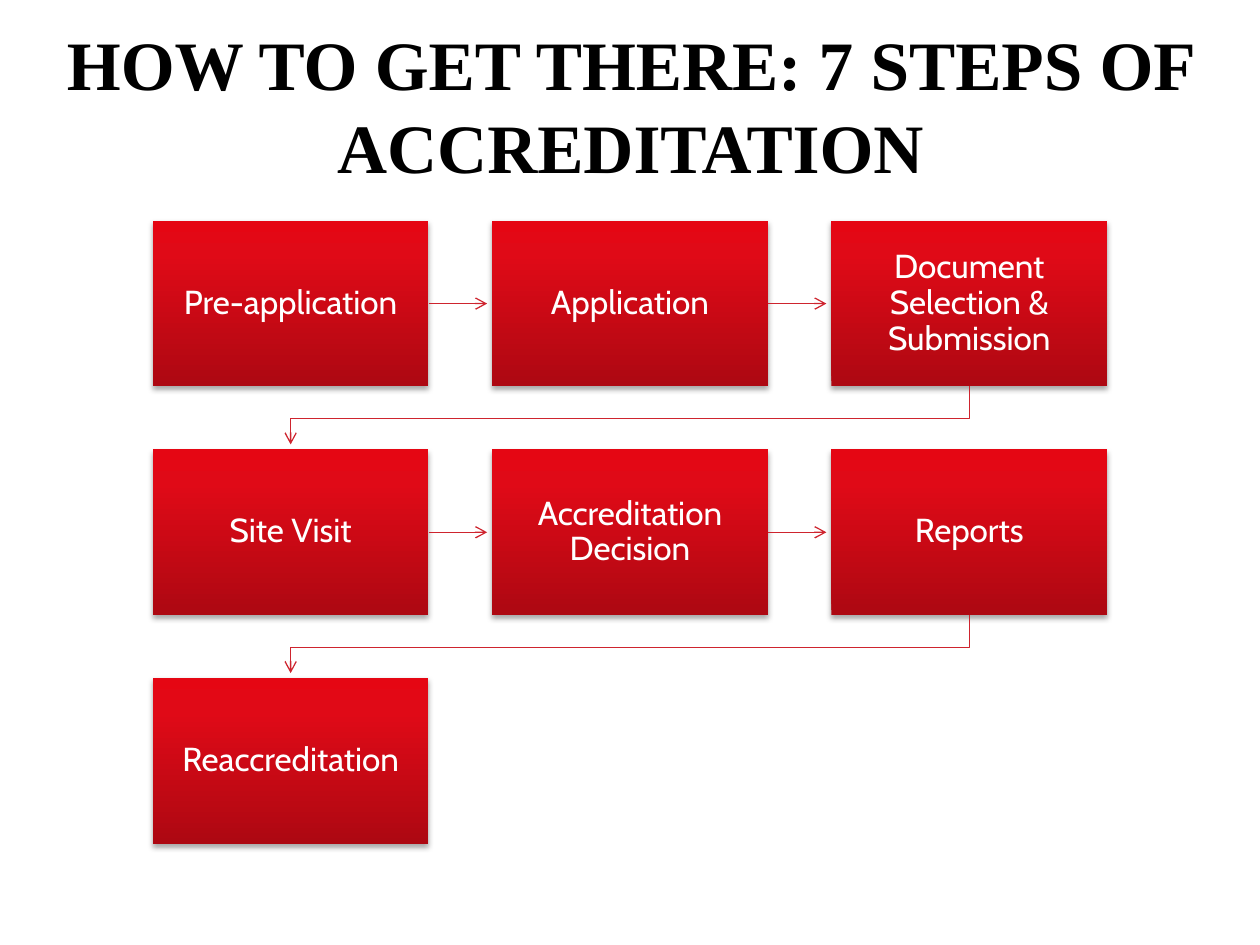
from dataclasses import dataclass

from lxml import etree
from pptx import Presentation
from pptx.dml.color import RGBColor
from pptx.enum.shapes import MSO_CONNECTOR, MSO_SHAPE
from pptx.enum.text import MSO_ANCHOR, PP_ALIGN
from pptx.oxml import parse_xml
from pptx.oxml.ns import qn
from pptx.util import Cm, Pt

RECT = MSO_SHAPE.RECTANGLE
STRAIGHT = MSO_CONNECTOR.STRAIGHT
MIDDLE = MSO_ANCHOR.MIDDLE
CENTER = PP_ALIGN.CENTER
BOTTOM, RIGHT = 2, 3
NS = "http://schemas.openxmlformats.org/drawingml/2006/main"


@dataclass(frozen=True)
class Theme:
    ink: str = "000000"
    paper: str = "FFFFFF"
    arrow: str = "CE242E"
    stops: tuple = ((0, "AD0812"), (80, "E00A17"), (100, "E50613"))
    head: str = "Times New Roman"
    body: str = "Cabin"
    head_size: float = 39.6
    body_size: float = 19
    line: float = 0.75


THEME = Theme()
STEPS = ["Pre-application", "Application", "Document Selection & Submission",
         "Site Visit", "Accreditation Decision", "Reports", "Reaccreditation"]
COLS = 3
STEP_W, STEP_H = 5.56, 3.34
PITCH_X, PITCH_Y = 6.84, 4.61
GAP = 0.1    # space between an arrow tip and the next step
DROP = 0.65  # fall of a row link before it turns left


def set_all(item, values):
    for name, value in values.items():
        setattr(item, name, value)


def write(shape, text, inset, spacing, font):
    frame = shape.text_frame
    sides = ("left", "top", "right", "bottom")
    set_all(frame, {"word_wrap": True, "vertical_anchor": MIDDLE,
                    **{f"margin_{side}": Cm(inset) for side in sides}})
    para = frame.paragraphs[0]
    set_all(para, {"text": text, "alignment": CENTER, "line_spacing": spacing})
    color = font.pop("color")
    set_all(para.runs[0].font, font)
    para.runs[0].font.color.rgb = RGBColor.from_string(color)


def add_title(slide, text, x, y, w, h):
    box = slide.shapes.add_textbox(Cm(x), Cm(y), Cm(w), Cm(h))
    write(box, text, 0.25, 1.0, {"name": THEME.head, "bold": True,
                                 "size": Pt(THEME.head_size), "color": THEME.ink})


def shade(shape):
    """Give a step its upward gradient and soft shadow."""
    stops = "".join(f'<a:gs pos="{pos * 1000}"><a:srgbClr val="{color}"/></a:gs>'
                    for pos, color in THEME.stops)
    shape.fill.gradient()
    props = shape._element.spPr
    props.replace(props.find(qn("a:gradFill")), parse_xml(
        f'<a:gradFill xmlns:a="{NS}" rotWithShape="1"><a:gsLst>{stops}</a:gsLst>'
        '<a:lin ang="16200000" scaled="0"/></a:gradFill>'))
    shape.line.fill.background()
    shape.shadow.inherit = False
    props.find(qn("a:effectLst")).append(parse_xml(
        f'<a:outerShdw xmlns:a="{NS}" blurRad="{Pt(3.1)}" dist="{Pt(1.8)}" '
        'dir="5400000" rotWithShape="0"><a:srgbClr val="000000">'
        '<a:alpha val="35000"/></a:srgbClr></a:outerShdw>'))


def add_step(slide, text, x, y):
    step = slide.shapes.add_shape(RECT, Cm(x), Cm(y), Cm(STEP_W), Cm(STEP_H))
    shade(step)
    write(step, text, 0.38, 0.9, {"name": THEME.body, "size": Pt(THEME.body_size),
                                  "color": THEME.paper})
    return step


def style_link(link):
    link.line.color.rgb = RGBColor.from_string(THEME.arrow)
    link.line.width = Pt(THEME.line)
    props = link._element.spPr
    etree.SubElement(props.find(qn("a:ln")), qn("a:tailEnd"), type="arrow")
    if props.find(qn("a:effectLst")) is None:
        etree.SubElement(props, qn("a:effectLst"))


def link_across(slide, step, x, y):
    """Arrow from a step to the next one in its row."""
    mid = Cm(y + STEP_H / 2)
    link = slide.shapes.add_connector(STRAIGHT, Cm(x + STEP_W), mid,
                                      Cm(x + PITCH_X - GAP), mid)
    link.begin_connect(step, RIGHT)
    style_link(link)


def link_down(slide, x, y, first):
    """Bent arrow from the end of a row to the start of the next."""
    start, end = Cm(x + STEP_W / 2), Cm(first + STEP_W / 2)
    base = y + STEP_H
    turn = Cm(base + DROP)
    path = slide.shapes.build_freeform(start, Cm(base))
    path.add_line_segments([(start, turn), (end, turn),
                            (end, Cm(y + PITCH_Y - GAP))], close=False)
    link = path.convert_to_shape()
    link.fill.background()
    link.shadow.inherit = False
    style_link(link)


def add_flow(slide, steps, left, top):
    for i, text in enumerate(steps):
        row, col = divmod(i, COLS)
        x, y = left + col * PITCH_X, top + row * PITCH_Y
        step = add_step(slide, text, x, y)
        if i == len(steps) - 1:
            continue
        if col < COLS - 1:
            link_across(slide, step, x, y)
        else:
            link_down(slide, x, y, left)


def main():
    deck = Presentation()
    set_all(deck, {"slide_width": Cm(25.4), "slide_height": Cm(19.05)})
    slide = deck.slides.add_slide(deck.slide_layouts[6])
    # Heading
    add_title(slide, "HOW TO GET THERE: 7 STEPS OF ACCREDITATION",
              0.43, 0.74, 24.56, 2.74)
    # Steps and arrows
    add_flow(slide, STEPS, 3.08, 4.45)
    deck.save("out.pptx")


if __name__ == "__main__":
    main()
